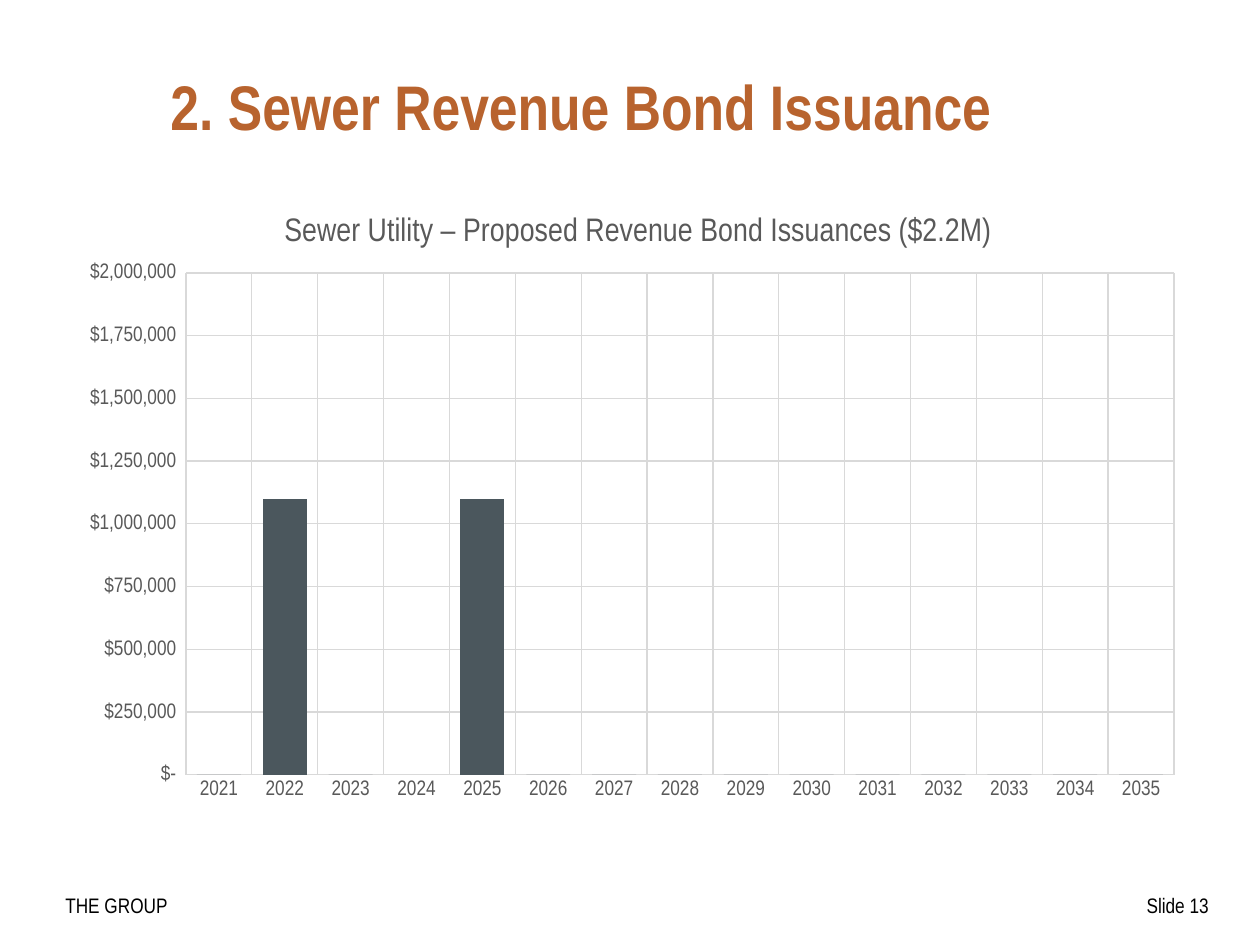
from dataclasses import dataclass

from lxml.etree import SubElement as Sub
from pptx import Presentation
from pptx.chart.axis import _BaseAxis as Axis
from pptx.chart.chart import Chart
from pptx.chart.data import CategoryChartData as Data
from pptx.dml.color import RGBColor as Rgb
from pptx.enum.chart import XL_CHART_TYPE as Kind, XL_TICK_MARK as Tick
from pptx.enum.text import MSO_ANCHOR as Anchor, PP_ALIGN as Align
from pptx.oxml import parse_xml
from pptx.oxml.ns import nsdecls, qn
from pptx.slide import Slide
from pptx.util import Pt

SCALE = 914400 / 126


def px(num: int) -> int:
    return round(num * SCALE)


@dataclass(frozen=True)
class Theme:
    font: str = "Arial Narrow"
    rust: Rgb = Rgb(0xB8, 0x63, 0x2E)
    slate: Rgb = Rgb(0x4B, 0x57, 0x5D)
    gray: Rgb = Rgb(0x59, 0x59, 0x59)
    grid: Rgb = Rgb(0xD9, 0xD9, 0xD9)
    black: Rgb = Rgb(0, 0, 0)
    head: float = 36
    sub: float = 18.6
    small: float = 12
    line: float = 0.75


THEME = Theme()


@dataclass(frozen=True)
class Box:
    left: int
    top: int
    width: int
    height: int

    def emu(self) -> tuple[int, ...]:
        return tuple(map(px, (self.left, self.top, self.width, self.height)))


@dataclass(frozen=True)
class Label:
    text: str
    box: Box
    size: float = THEME.small
    color: Rgb = THEME.black
    bold: bool = False
    align: Align = Align.LEFT
    anchor: Anchor = Anchor.TOP


LABELS = (
    Label("Slide 13 ", Box(1124, 886, 102, 38), align=Align.RIGHT),
    Label("THE GROUP", Box(53, 886, 179, 38)),
    Label("2. Sewer Revenue Bond Issuance", Box(158, 42, 1040, 126),
          THEME.head, THEME.rust, True, anchor=Anchor.MIDDLE),
)
FRAME = Box(63, 189, 1134, 624)
PLOT = Box(186, 273, 988, 502)
HEADING = "Sewer Utility – Proposed Revenue Bond Issuances ($2.2M)"
MONEY = r'_("$"* #,##0_);_("$"* \(#,##0\);_("$"* "-"_);_(@_)'
YEARS = range(2021, 2036)
BONDS = {2022: 1100000, 2024: None, 2025: 1100000}


def style(font, size: float, color: Rgb, bold: bool = False) -> None:
    font.name = THEME.font
    font.size = Pt(size)
    font.bold = bold
    font.color.rgb = color


def write(slide: Slide, label: Label) -> None:
    frame = slide.shapes.add_textbox(*label.box.emu()).text_frame
    frame.word_wrap = True
    frame.vertical_anchor = label.anchor
    frame.text = label.text
    para = frame.paragraphs[0]
    para.alignment = label.align
    style(para.runs[0].font, label.size, label.color, label.bold)


def layout(**spots: float | str):
    root = parse_xml(f"<c:layout {nsdecls('c')}/>")
    manual = Sub(root, qn("c:manualLayout"))
    for name, val in spots.items():
        Sub(manual, qn(f"c:{name}"), val=str(val))
    return root


def rule(axis: Axis) -> None:
    axis.has_major_gridlines = True
    line = axis.major_gridlines.format.line
    line.color.rgb = THEME.grid
    line.width = Pt(THEME.line)
    axis.major_tick_mark = axis.minor_tick_mark = Tick.NONE
    style(axis.tick_labels.font, THEME.small, THEME.gray)


def entitle(chart: Chart) -> None:
    chart.has_title = True
    frame = chart.chart_title.text_frame
    frame.text = HEADING
    style(frame.paragraphs[0].runs[0].font, THEME.sub, THEME.gray)
    title = chart.chart_title._element
    for old in title.findall(qn("c:layout")):
        title.remove(old)
    spot = layout(xMode="edge", yMode="edge", x=0.19, y=0.03)
    title.find(qn("c:tx")).addnext(spot)


def place(chart: Chart) -> None:
    area = chart._chartSpace.chart.plotArea
    for old in area.findall(qn("c:layout")):
        area.remove(old)
    area.insert(0, layout(
        layoutTarget="inner", xMode="edge", yMode="edge",
        x=round((PLOT.left - FRAME.left) / FRAME.width, 4),
        y=round((PLOT.top - FRAME.top) / FRAME.height, 4),
        w=round(PLOT.width / FRAME.width, 4),
        h=round(PLOT.height / FRAME.height, 4)))


def graph(slide: Slide) -> None:
    data = Data()
    data.categories = [str(year) for year in YEARS]
    data.add_series("Series 1", [BONDS.get(year, 0) for year in YEARS])
    chart = slide.shapes.add_chart(
        Kind.COLUMN_STACKED, *FRAME.emu(), data).chart
    style(chart.font, 10, THEME.black)
    chart.has_legend = False
    entitle(chart)
    place(chart)
    plot = chart.plots[0]
    plot.gap_width = 50
    plot.overlap = -8
    plot.vary_by_categories = False
    fill = plot.series[0].format.fill
    fill.solid()
    fill.fore_color.rgb = THEME.slate
    years, money = chart.category_axis, chart.value_axis
    for axis in (years, money):
        rule(axis)
    years.format.line.color.rgb = THEME.grid
    years.format.line.width = Pt(THEME.line)
    money.format.line.fill.background()
    money.minimum_scale = 0
    money.maximum_scale = 2000000
    money.major_unit = 250000
    money.tick_labels.number_format = MONEY
    money.tick_labels.number_format_is_linked = False


def main() -> None:
    deck = Presentation()
    deck.slide_width, deck.slide_height = px(1260), px(945)
    slide = deck.slides.add_slide(deck.slide_layouts[6])
    for label in LABELS:
        write(slide, label)
    graph(slide)
    deck.save("out.pptx")


if __name__ == "__main__":
    main()
